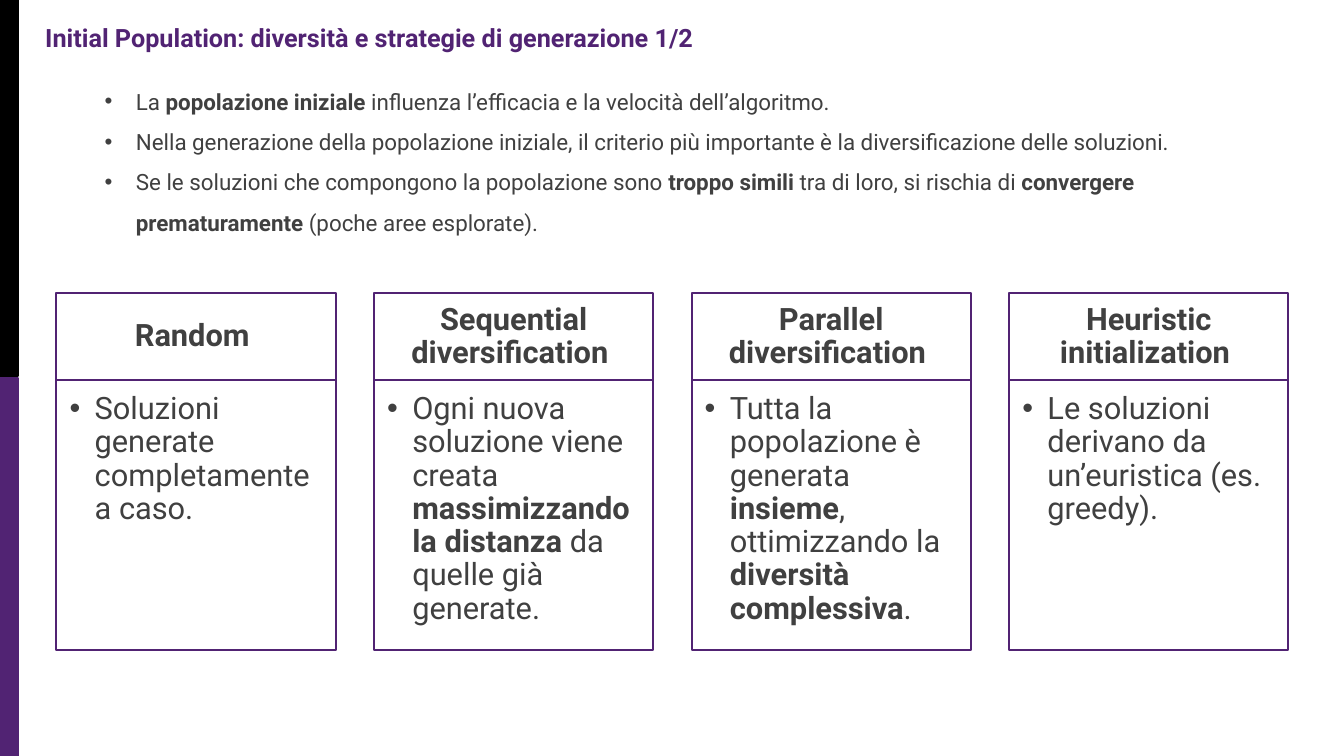
from dataclasses import dataclass

from lxml import etree
from pptx import Presentation
from pptx.dml.color import RGBColor
from pptx.enum.shapes import MSO_SHAPE
from pptx.enum.text import MSO_ANCHOR, PP_ALIGN
from pptx.oxml.ns import qn
from pptx.util import Emu, Inches, Pt

RECT = MSO_SHAPE.RECTANGLE
TOP, MIDDLE = MSO_ANCHOR.TOP, MSO_ANCHOR.MIDDLE
LEFT, CENTER = PP_ALIGN.LEFT, PP_ALIGN.CENTER
WIDE, HIGH = Inches(13.33), Inches(7.5)


@dataclass(frozen=True)
class Theme:
    font: str = "Roboto"
    purple: RGBColor = RGBColor(0x51, 0x23, 0x73)
    black: RGBColor = RGBColor(0, 0, 0)
    white: RGBColor = RGBColor(0xFF, 0xFF, 0xFF)
    gray: RGBColor = RGBColor(0x40, 0x40, 0x40)
    title: int = 18
    intro: int = 16
    card: int = 22
    edge: float = 1.5


@dataclass(frozen=True)
class Area:
    """Place and size in percent of the slide."""
    x: float
    y: float
    w: float
    h: float

    def span(self) -> tuple[Emu, ...]:
        parts = ((self.x, WIDE), (self.y, HIGH), (self.w, WIDE), (self.h, HIGH))
        return tuple(Emu(round(share * full / 100)) for share, full in parts)


@dataclass(frozen=True)
class Style:
    size: int
    color: RGBColor
    bold: bool = False
    align: PP_ALIGN = LEFT
    anchor: MSO_ANCHOR = TOP
    pitch: float = 1.0
    inset: tuple[float, ...] = (0.1, 0.05, 0.1, 0.05)
    indent: float = 0
    hang: float = 0


@dataclass(frozen=True)
class Card:
    head: str
    body: str


THEME = Theme()
TITLE = Style(THEME.title, THEME.purple, bold=True)
INTRO = Style(THEME.intro, THEME.gray, pitch=1.5, indent=0.81, hang=0.31)
HEAD = Style(THEME.card, THEME.gray, bold=True, align=CENTER, anchor=MIDDLE,
             pitch=0.9, inset=(0.17, 0.1, 0.17, 0.1))
BODY = Style(THEME.card, THEME.gray, pitch=0.9, inset=(0.13, 0.13, 0.17, 0.19),
             indent=0.25, hang=0.25)

# Asterisks enclose bold words
POINTS = (
    "La *popolazione iniziale* influenza l’efficacia e la velocità dell’algoritmo.",
    "Nella generazione della popolazione iniziale, il criterio più importante "
    "è la diversificazione delle soluzioni.",
    "Se le soluzioni che compongono la popolazione sono *troppo simili* tra di "
    "loro, si rischia di *convergere prematuramente* (poche aree esplorate).",
)
CARDS = (
    Card("Random ", "Soluzioni generate completamente a caso."),
    Card("Sequential diversification ",
         "Ogni nuova soluzione viene creata *massimizzando la distanza* "
         "da quelle già generate."),
    Card("Parallel diversification ",
         "Tutta la popolazione è generata *insieme*, ottimizzando la "
         "*diversità complessiva*."),
    Card("Heuristic initialization ",
         "Le soluzioni derivano da un’euristica (es. greedy)."),
)

# Card grid, in percent of the slide
START, STEP, SPAN = 4.2, 23.63, 20.78
HEAD_Y, HEAD_H, BODY_H = 38.8, 11.47, 35.73


def apply(target, values: dict) -> None:
    for name, value in values.items():
        setattr(target, name, value)


def add_dot(para, style: Style) -> None:
    props = para._p.get_or_add_pPr()
    props.set("marL", str(Inches(style.indent)))
    props.set("indent", str(-Inches(style.hang)))
    etree.SubElement(props, qn("a:buFont")).set("typeface", "Arial")
    etree.SubElement(props, qn("a:buChar")).set("char", "•")


def write(frame, lines: tuple[str, ...], style: Style) -> None:
    left, top, right, bottom = map(Inches, style.inset)
    apply(frame, {"word_wrap": True, "vertical_anchor": style.anchor,
                  "margin_left": left, "margin_top": top,
                  "margin_right": right, "margin_bottom": bottom})
    for row, line in enumerate(lines):
        para = frame.add_paragraph() if row else frame.paragraphs[0]
        apply(para, {"alignment": style.align, "line_spacing": style.pitch})
        if style.hang:
            add_dot(para, style)
        for part, text in enumerate(line.split("*")):
            run = para.add_run()
            run.text = text
            apply(run.font, {"name": THEME.font, "size": Pt(style.size),
                             "bold": style.bold or part % 2 == 1})
            run.font.color.rgb = style.color


def add_box(slide, area: Area, fill: RGBColor, edge: RGBColor):
    box = slide.shapes.add_shape(RECT, *area.span())
    box.shadow.inherit = False
    box.fill.solid()
    box.fill.fore_color.rgb = fill
    box.line.color.rgb = edge
    box.line.width = Pt(THEME.edge)
    return box


def add_text(slide, area: Area, lines: tuple[str, ...], style: Style) -> None:
    write(slide.shapes.add_textbox(*area.span()).text_frame, lines, style)


def add_card(slide, card: Card, col: int) -> None:
    x = START + col * STEP
    tiers = ((HEAD_Y, HEAD_H, card.head, HEAD),
             (HEAD_Y + HEAD_H, BODY_H, card.body, BODY))
    for y, tall, text, style in tiers:
        box = add_box(slide, Area(x, y, SPAN, tall), THEME.white, THEME.purple)
        write(box.text_frame, (text,), style)


def main() -> None:
    deck = Presentation()
    apply(deck, {"slide_width": WIDE, "slide_height": HIGH})
    slide = deck.slides.add_slide(deck.slide_layouts[6])

    # Title and side bars
    add_text(slide, Area(2.63, 2.27, 64.97, 5.33),
             ("Initial Population: diversità e strategie di generazione 1/2",), TITLE)
    for y, tall, color in ((50, 50, THEME.purple), (0, 49.73, THEME.black)):
        add_box(slide, Area(0, y, 1.35, tall), color, color)

    # Strategy cards
    for col, card in enumerate(CARDS):
        add_card(slide, card, col)

    # Opening points
    add_text(slide, Area(3.3, 9.2, 88.97, 22.27), POINTS, INTRO)
    deck.save("out.pptx")


if __name__ == "__main__":
    main()
